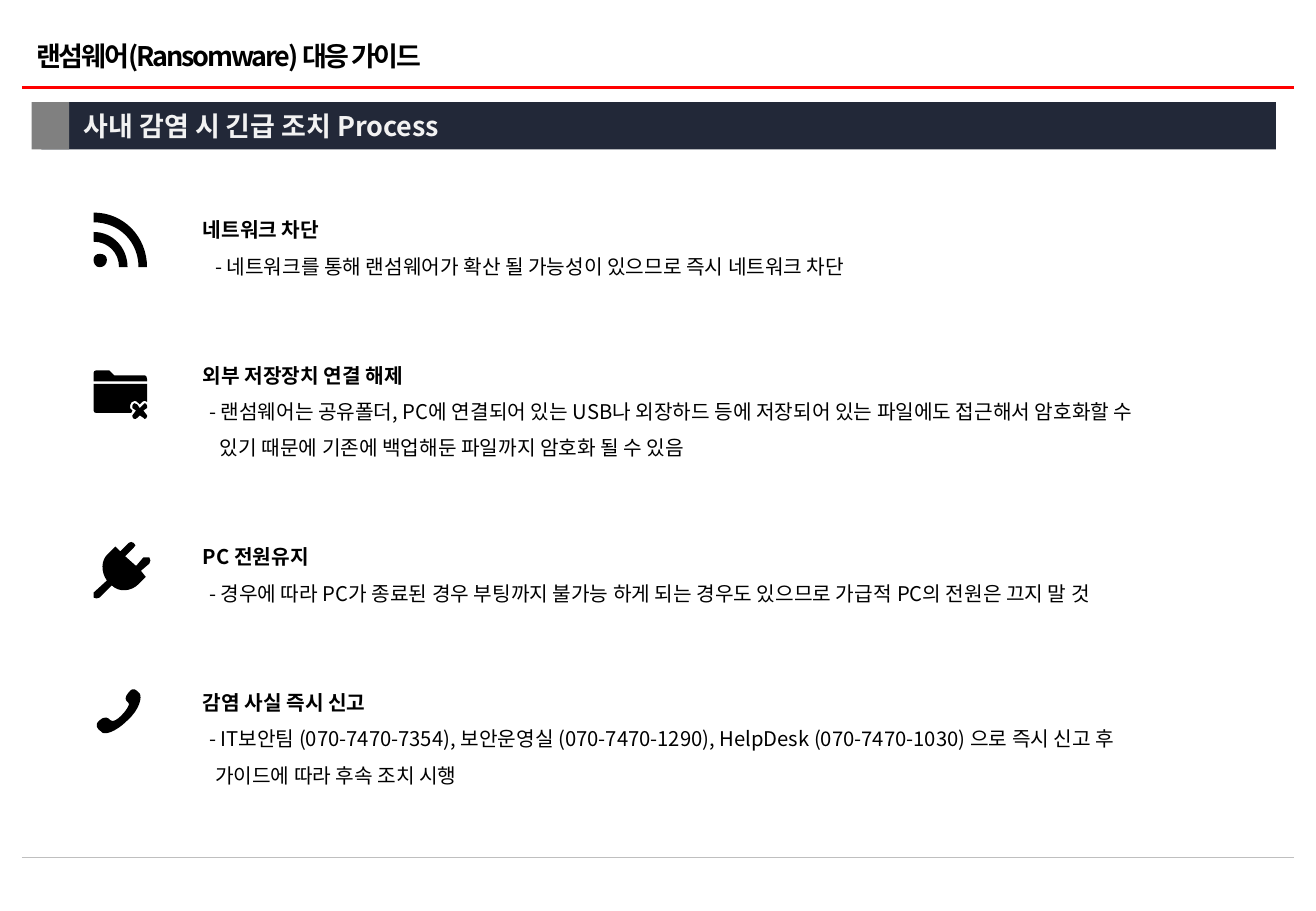
from lxml import etree
from pptx import Presentation
from pptx.dml.color import RGBColor
from pptx.enum.shapes import MSO_CONNECTOR, MSO_SHAPE
from pptx.enum.text import MSO_ANCHOR, MSO_AUTO_SIZE, PP_ALIGN
from pptx.oxml.ns import qn
from pptx.util import Pt

STRAIGHT = MSO_CONNECTOR.STRAIGHT
RECTANGLE = MSO_SHAPE.RECTANGLE
MIDDLE, TOP = MSO_ANCHOR.MIDDLE, MSO_ANCHOR.TOP
LEFT = PP_ALIGN.LEFT
NO_AUTOFIT = MSO_AUTO_SIZE.NONE

EMU_PER_PX = 9144  # 100 px to the inch
FONT = "Noto Sans CJK KR"
COLORS = {
    "ink": "000000",
    "accent": "FF0000",
    "rule": "BFBFBF",
    "banner": "222838",
    "tab": "808080",
    "banner_text": "F2F2F2",
}

# Each step: heading, then detail lines with their left indent in px
STEPS = [
    ("네트워크 차단", [
        (10, "- 네트워크를 통해 랜섬웨어가 확산 될 가능성이 있으므로 즉시 네트워크 차단")]),
    ("외부 저장장치 연결 해제", [
        (5, "- 랜섬웨어는 공유폴더, PC에 연결되어 있는 USB나 외장하드 등에 저장되어 있는 파일에도 접근해서 암호화할 수"),
        (14, "있기 때문에 기존에 백업해둔 파일까지 암호화 될 수 있음")]),
    ("PC 전원유지", [
        (5, "- 경우에 따라 PC가 종료된 경우 부팅까지 불가능 하게 되는 경우도 있으므로 가급적 PC의 전원은 끄지 말 것")]),
    ("감염 사실 즉시 신고", [
        (5, "- IT보안팀 (070-7470-7354), 보안운영실 (070-7470-1290), HelpDesk (070-7470-1030) 으로 즉시 신고 후"),
        (10, "가이드에 따라 후속 조치 시행")]),
]

# Outlines in px: a pair is a straight line, six numbers are a cubic curve
SIGNAL = [
    [(114, 220), (114, 199, 98, 183, 77, 183), (77, 175), (102, 175, 121, 195, 121, 220)],
    [(105, 220), (98, 220), (98, 208, 89, 199, 77, 199), (77, 191), (93, 191, 105, 204, 105, 220)],
    [(82, 209), (86, 209, 88, 211, 88, 214), (88, 217, 86, 220, 82, 220),
     (79, 220, 77, 217, 77, 214), (77, 211, 79, 209, 82, 209)],
]
FOLDER = [
    [(119, 330), (118, 330, 117, 331, 116, 332), (115, 333), (114, 332),
     (113, 331, 112, 330, 111, 330), (109, 330, 107, 332, 107, 334),
     (107, 336, 107, 337, 108, 337), (109, 338), (108, 340), (79, 340),
     (78, 340, 77, 339, 77, 338), (77, 316), (121, 316), (121, 331),
     (121, 331, 120, 330, 119, 330)],
    [(77, 312), (77, 307), (77, 306, 78, 305, 79, 305), (90, 305), (94, 309), (119, 309),
     (120, 309, 121, 310, 121, 312), (121, 314), (77, 314)],
    [(109, 342), (112, 338), (109, 336), (109, 335, 109, 335, 109, 334),
     (109, 333, 110, 332, 111, 332), (111, 332, 112, 333, 113, 333), (115, 336), (118, 333),
     (118, 333, 119, 332, 119, 332), (120, 332, 121, 333, 121, 334),
     (121, 335, 121, 335, 121, 336), (118, 338), (121, 342),
     (121, 342, 121, 342, 121, 343), (121, 344, 120, 345, 119, 345),
     (119, 345, 118, 345, 118, 344), (115, 342), (113, 344),
     (112, 345, 111, 345, 111, 345), (110, 345, 109, 344, 109, 343)],
]
PLUG = [
    [(114, 481), (108, 487, 98, 488, 92, 482), (82, 492), (80, 493, 79, 493, 77, 492),
     (77, 491, 77, 489, 77, 488), (88, 478), (83, 471, 83, 461, 89, 456), (95, 450),
     (99, 454), (106, 447), (107, 446, 109, 446, 110, 447), (112, 448, 112, 450, 110, 451),
     (103, 458), (112, 466), (118, 459), (120, 459, 122, 459, 123, 459),
     (124, 461, 124, 462, 123, 464), (116, 470), (120, 475)],
]
HANDSET = [
    [(100, 589), (97, 592, 93, 595, 91, 593), (89, 591, 87, 589, 82, 593),
     (77, 597, 81, 601, 83, 602), (85, 606, 95, 603, 105, 593),
     (115, 584, 117, 574, 115, 571), (112, 568, 110, 565, 106, 570),
     (102, 575, 103, 576, 106, 579), (107, 580, 104, 585, 100, 589)],
]


def px(*lengths):
    return [round(length * EMU_PER_PX) for length in lengths]


def color(name):
    return RGBColor.from_string(COLORS[name])


def bend(shape, outlines):
    """Join each run of three control points into one cubic curve."""
    corners = iter(list(shape._element.iter(qn("a:lnTo"))))
    for outline in outlines:
        for segment in outline[1:]:
            corner = next(corners)
            if len(segment) == 6:
                corner.tag = qn("a:cubicBezTo")
                for _ in range(2):
                    control = next(corners)
                    corner.append(control[0])
                    control.getparent().remove(control)


class GuideSlide:
    def __init__(self, deck):
        self.slide = deck.slides.add_slide(deck.slide_layouts[1])
        self.shapes = self.slide.shapes

    def style(self, paragraph, size, ink="ink", bold=False, tracking=None):
        paragraph.alignment = LEFT
        for run in paragraph.runs:
            font = run.font
            font.size, font.bold, font.name = Pt(size), bold, FONT
            font.color.rgb = color(ink)
            properties = run._r.get_or_add_rPr()
            etree.SubElement(properties, qn("a:ea")).set("typeface", FONT)
            properties.set("kern", "0")
            if tracking is not None:
                properties.set("spc", str(tracking))

    def place(self, holder, box, insets, anchor):
        holder.left, holder.top, holder.width, holder.height = px(*box)
        frame = holder.text_frame
        frame.auto_size, frame.word_wrap = NO_AUTOFIT, True
        frame.vertical_anchor = anchor
        frame.margin_left, frame.margin_top = px(*insets)
        frame.margin_right, frame.margin_bottom = px(*insets)
        return frame

    def title(self, text, box):
        frame = self.place(self.shapes.title, box, (0, 0), MIDDLE)
        frame.text = text
        self.style(frame.paragraphs[0], 16, bold=True, tracking=-130)

    def steps(self, steps, box):
        frame = self.place(self.slide.placeholders[1], box, (15, 6), TOP)
        lines = []
        for number, (heading, details) in enumerate(steps):
            lines.append((heading, 0, True, 43 if number else 0))
            lines += [(detail, indent, False, 0) for indent, detail in details]
        frame.text = "\n".join(line[0] for line in lines)
        for paragraph, (_, indent, bold, gap) in zip(frame.paragraphs, lines):
            properties = paragraph._p.get_or_add_pPr()
            properties.set("marL", str(px(indent)[0]))
            properties.set("indent", "0")
            etree.SubElement(properties, qn("a:buNone"))
            paragraph.line_spacing = 1.5
            paragraph.space_before = Pt(gap)
            self.style(paragraph, 12, bold=bold)

    def rule(self, y, ink, weight):
        line = self.shapes.add_connector(STRAIGHT, *px(18, y, 1065, y))
        line.line.color.rgb = color(ink)
        line.line.width = Pt(weight)
        etree.SubElement(line._element.spPr, qn("a:effectLst"))

    def paint(self, shape, fill):
        shape.shadow.inherit = False
        shape.fill.solid()
        shape.fill.fore_color.rgb = color(fill)
        shape.line.fill.background()

    def bar(self, box, fill, text=None):
        bar = self.shapes.add_shape(RECTANGLE, *px(*box))
        self.paint(bar, fill)
        if text:
            frame = bar.text_frame
            frame.text = text
            frame.margin_left = px(35)[0]
            frame.vertical_anchor = MIDDLE
            self.style(frame.paragraphs[0], 16, "banner_text", bold=True)

    def icon(self, outlines):
        builder = self.shapes.build_freeform(*px(*outlines[0][0]))
        for number, (start, *segments) in enumerate(outlines):
            if number:
                builder.move_to(*px(*start))
            points = [tuple(px(*segment[i:i + 2]))
                      for segment in segments for i in range(0, len(segment), 2)]
            builder.add_line_segments(points, close=True)
        shape = builder.convert_to_shape()
        bend(shape, outlines)
        self.paint(shape, "ink")


def main():
    deck = Presentation()
    deck.slide_width, deck.slide_height = px(1083, 750)
    guide = GuideSlide(deck)
    guide.rule(72, "accent", 2.25)
    guide.rule(706, "rule", 0.25)
    guide.title("랜섬웨어(Ransomware) 대응 가이드", (30, 32, 1020, 27))
    guide.steps(STEPS, (152, 163, 886, 495))
    guide.bar((34, 84, 1016, 39), "banner", "사내 감염 시 긴급 조치 Process")
    guide.bar((26, 84, 31, 39), "tab")
    for outlines in (SIGNAL, FOLDER, PLUG, HANDSET):
        guide.icon(outlines)
    deck.save("out.pptx")


if __name__ == "__main__":
    main()
